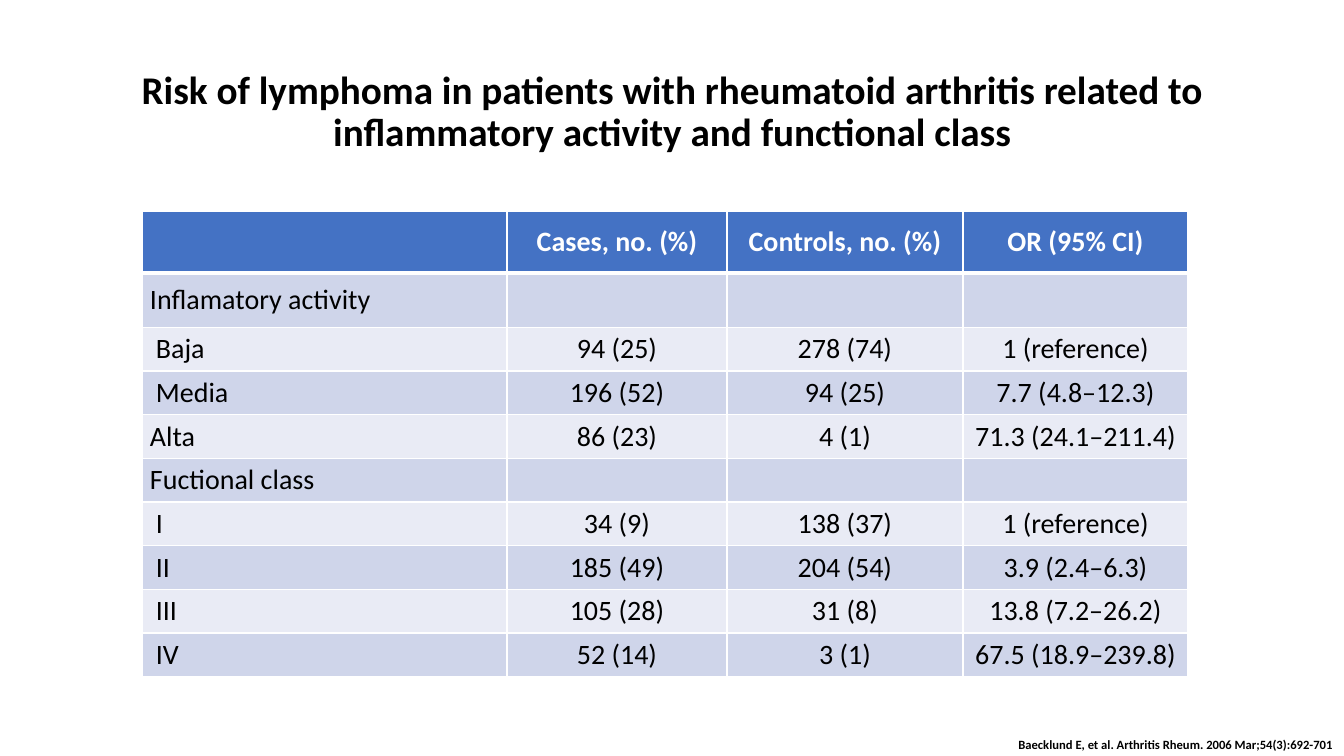
from lxml.etree import SubElement as Sub
from pptx import Presentation
from pptx.dml.color import RGBColor as RGB
from pptx.enum.text import MSO_ANCHOR as Anchor, MSO_AUTO_SIZE as Fit, PP_ALIGN as Align
from pptx.oxml.ns import qn
from pptx.util import Cm, Pt

HUES = {"head": "4472C4", "dark": "CFD5EA", "light": "E9EBF5",
        "white": "FFFFFF", "black": "000000"}


def write(para, text, size, hue="black", bold=True, align=Align.CENTER):
    para.alignment = align
    run = para.add_run()
    run.text = text
    font = run.font
    font.name, font.size, font.bold = "Calibri", Pt(size), bold
    font.color.rgb = RGB.from_string(HUES[hue])


def edge(cell, side, width):
    line = Sub(cell._tc.get_or_add_tcPr(), qn("a:" + side), w=str(Pt(width)))
    fill = Sub(line, qn("a:solidFill"))
    Sub(fill, qn("a:srgbClr"), val=HUES["white"])


deck = Presentation()
deck.slide_width, deck.slide_height = Cm(33.87), Cm(19.05)
slide = deck.slides.add_slide(deck.slide_layouts[5])

# Title
title = slide.shapes.title
title.left, title.top, title.width, title.height = Cm(2.33), Cm(1.01), Cm(29.21), Cm(3.68)
frame = title.text_frame
frame.word_wrap, frame.auto_size = True, Fit.NONE
frame.vertical_anchor = Anchor.MIDDLE
frame.paragraphs[0].line_spacing = 0.9
write(frame.paragraphs[0], "Risk of lymphoma in patients with rheumatoid arthritis "
      "related to inflammatory activity and functional class", 28)

# Citation
note = slide.shapes.add_textbox(Cm(17.73), Cm(18.44), Cm(16.1), Cm(0.64)).text_frame
note.word_wrap = True
write(note.paragraphs[0], "Baecklund E, et al. Arthritis Rheum. 2006 Mar;54(3):692-701",
      9, align=Align.RIGHT)

# Table
rows = [
    ["", "Cases, no. (%)", "Controls, no. (%)", "OR (95% CI)"],
    ["Inflamatory activity", "", "", ""],
    ["Baja", "94 (25)", "278 (74)", "1 (reference)"],
    ["Media", "196 (52)", "94 (25)", "7.7 (4.8–12.3)"],
    ["Alta", "86 (23)", "4 (1)", "71.3 (24.1–211.4)"],
    ["Fuctional class", "", "", ""],
    ["I", "34 (9)", "138 (37)", "1 (reference)"],
    ["II", "185 (49)", "204 (54)", "3.9 (2.4–6.3)"],
    ["III", "105 (28)", "31 (8)", "13.8 (7.2–26.2)"],
    ["IV", "52 (14)", "3 (1)", "67.5 (18.9–239.8)"],
]
flush = {"Inflamatory activity", "Alta", "Fuctional class"}
wide = [9.2, 5.54, 5.95, 5.67]
tall = [1.55, 1.37] + [1.1] * 8
table = slide.shapes.add_table(len(rows), len(wide), Cm(3.58), Cm(5.33),
                               Cm(sum(wide)), Cm(sum(tall))).table
for col, width in zip(table.columns, wide):
    col.width = Cm(width)
for row, height in zip(table.rows, tall):
    row.height = Cm(height)

for r, row in enumerate(rows):
    head = r == 0
    for c, text in enumerate(row):
        cell = table.cell(r, c)
        cell.vertical_anchor = Anchor.MIDDLE
        cell.margin_left = Cm(0.2 if c or text in flush else 0.35)
        cell.margin_right = Cm(0.2)
        cell.margin_top = cell.margin_bottom = Cm(0.1)
        for side in ("lnL", "lnR", "lnT", "lnB"):
            thick = (head and side == "lnB") or (r == 1 and side == "lnT")
            edge(cell, side, 3 if thick else 1)
        cell.fill.solid()
        band = "head" if head else "dark" if r % 2 else "light"
        cell.fill.fore_color.rgb = RGB.from_string(HUES[band])
        if text:
            write(cell.text_frame.paragraphs[0], text, 20, "white" if head else "black",
                  head, Align.CENTER if c else Align.LEFT)

deck.save("out.pptx")
